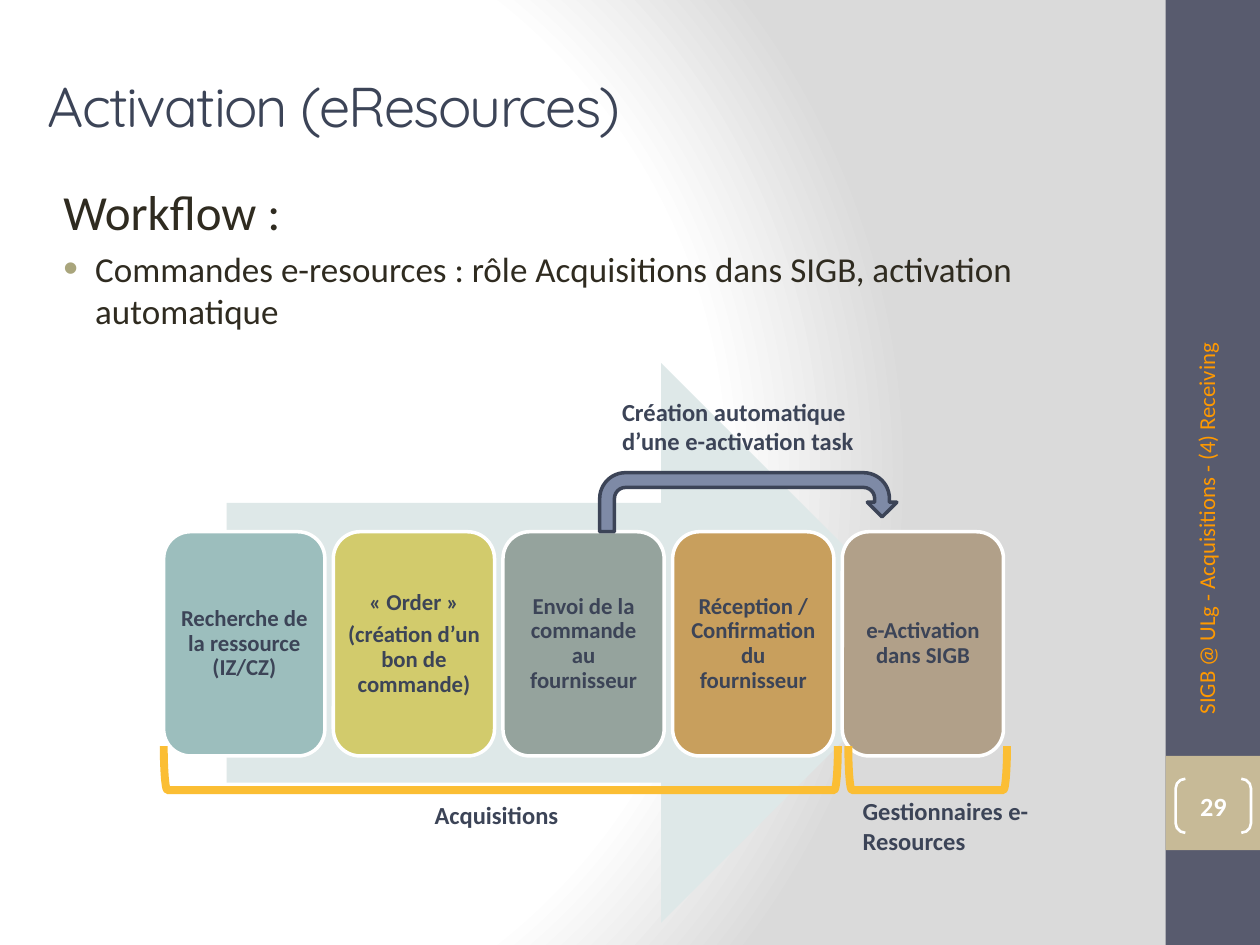
from collections import namedtuple
from dataclasses import dataclass

from lxml.etree import SubElement
from pptx import Presentation
from pptx.dml.color import RGBColor
from pptx.enum.shapes import MSO_SHAPE as Shape
from pptx.enum.text import MSO_ANCHOR as Anchor, MSO_AUTO_SIZE as AutoSize, PP_ALIGN as Align
from pptx.oxml.ns import qn
from pptx.util import Cm, Pt

Box = namedtuple("Box", "left top width height")  # centimetres


@dataclass(frozen=True)
class Theme:
    body_font: str = "Calibri"
    title_font: str = "Quicksand"
    ink: str = "3C4457"
    text: str = "2F2B20"
    bullet: str = "A9A57C"
    white: str = "FFFFFF"
    shade: str = "DADADA"
    strip: str = "585B6E"
    badge: str = "C7BA97"
    footer: str = "FF9900"
    big_arrow: str = "DEE8E8"
    turn_arrow: str = "7E8AA6"
    bracket: str = "FBBE34"
    title_size: int = 32
    heading_size: int = 28
    body_size: int = 20
    number_size: int = 15
    label_size: int = 14
    small_size: int = 13


THEME = Theme()
STEPS = [
    ("9CBEBD", ["Recherche de la ressource (IZ/CZ)"]),
    ("D2CB6C", ["« Order »", "(création d’un bon de commande)"]),
    ("95A39D", ["Envoi de la commande au fournisseur"]),
    ("C89F5D", ["Réception / Confirmation du fournisseur"]),
    ("B1A089", ["e-Activation dans SIGB"]),
]


def rgb(colour):
    return RGBColor.from_string(colour)


def within(area, left, top, width, height):
    """Box given relative to the corner of an area."""
    return Box(area.left + left, area.top + top, width, height)


def turned(box):
    """Unrotated frame of a shape that covers the box after a quarter turn."""
    shift = (box.width - box.height) / 2
    return Box(box.left + shift, box.top - shift, box.height, box.width)


def set_margins(frame, margin):
    frame.margin_left = frame.margin_right = Cm(margin)
    frame.margin_top = frame.margin_bottom = Cm(margin)


def style(para, size, colour, bold=False, font=THEME.body_font):
    para.font.name = font
    para.font.size = Pt(size)
    para.font.bold = bold
    para.font.color.rgb = rgb(colour)


def add_shape(page, kind, box, fill=None, line=None, weight=2):
    shape = page.shapes.add_shape(kind, *map(Cm, box))
    shape.shadow.inherit = False
    if fill:
        shape.fill.solid()
        shape.fill.fore_color.rgb = rgb(fill)
    else:
        shape.fill.background()
    if line:
        shape.line.color.rgb = rgb(line)
        shape.line.width = Pt(weight)
    else:
        shape.line.fill.background()
    return shape


def add_text(page, box, text, size, colour, bold=False):
    shape = page.shapes.add_textbox(*map(Cm, box))
    frame = shape.text_frame
    frame.word_wrap = True
    frame.text = text
    style(frame.paragraphs[0], size, colour, bold)
    return shape


def add_label(page, box, text):
    label = add_text(page, box, text, THEME.label_size, THEME.ink, True)
    label.text_frame.auto_size = AutoSize.SHAPE_TO_FIT_TEXT


def paint_background(page):
    fill = page.background.fill
    fill.gradient()
    gradient = page.background._cSld.find(".//" + qn("a:gradFill"))
    for child in list(gradient):
        gradient.remove(child)
    stops = SubElement(gradient, qn("a:gsLst"))
    for position, colour in [(0, THEME.white), (38, THEME.white),
                             (75, THEME.white), (100, THEME.shade)]:
        stop = SubElement(stops, qn("a:gs"), pos=str(position * 1000))
        SubElement(stop, qn("a:srgbClr"), val=colour)
    path = SubElement(gradient, qn("a:path"), path="circle")
    SubElement(path, qn("a:fillToRect"), l="20000", t="50000", r="100000", b="50000")


def build_side_strip(page, area):
    add_shape(page, Shape.RECTANGLE, area, THEME.strip)
    add_shape(page, Shape.RECTANGLE, within(area, 0, 15.24, area.width, area.width), THEME.badge)

    footer_box = turned(within(area, 0.41, 0.53, 1.02, 14.12))
    footer = add_text(page, footer_box, "SIGB @ ULg - Acquisitions - (4) Receiving",
                      THEME.small_size, THEME.footer)
    footer.rotation = 270

    number = add_shape(page, Shape.DOUBLE_BRACKET, within(area, 0.2, 15.7, 1.52, 1.09),
                       line=THEME.white, weight=1.5)
    number.adjustments[0] = 0.18
    frame = number.text_frame
    set_margins(frame, 0)
    frame.vertical_anchor = Anchor.MIDDLE
    frame.text = "29"
    para = frame.paragraphs[0]
    para.alignment = Align.CENTER
    style(para, THEME.number_size, THEME.white, True)


def build_title(page, box):
    title = page.shapes.title
    title.left, title.top, title.width, title.height = map(Cm, box)
    frame = title.text_frame
    frame.text = "Activation (eResources)"
    frame.auto_size = AutoSize.NONE
    frame.vertical_anchor = Anchor.MIDDLE
    para = frame.paragraphs[0]
    para.alignment = Align.LEFT
    style(para, THEME.title_size, THEME.ink, font=THEME.title_font)
    para.runs[0].font._element.set("spc", "-100")


def build_body(page, box):
    body = add_text(page, box, "Workflow :", THEME.heading_size, THEME.text)
    heading = body.text_frame.paragraphs[0]
    item = body.text_frame.add_paragraph()
    item.text = "Commandes e-resources : rôle Acquisitions dans SIGB, activation automatique"
    item.space_before = Pt(4)
    for para in (heading, item):
        props = para._p.get_or_add_pPr()
        props.set("marL", str(Cm(0.96)))
        props.set("indent", str(Cm(-0.64)))
    colour = SubElement(props, qn("a:buClr"))
    SubElement(colour, qn("a:srgbClr"), val=THEME.bullet)
    SubElement(props, qn("a:buSzPct"), val="120000")
    SubElement(props, qn("a:buFont"), typeface="Arial")
    SubElement(props, qn("a:buChar"), char="•")
    style(item, THEME.body_size, THEME.text)


def build_step(page, box, fill, lines):
    card = add_shape(page, Shape.ROUNDED_RECTANGLE, box, fill, THEME.white)
    frame = card.text_frame
    frame.word_wrap = True
    frame.vertical_anchor = Anchor.MIDDLE
    set_margins(frame, 0.13)
    frame.text = "\n".join(lines)
    for para in frame.paragraphs:
        para.alignment = Align.CENTER
        para.line_spacing = 0.9
        para.space_after = Pt(4.5)
        style(para, THEME.small_size, THEME.ink, True)


def build_workflow(page, area):
    add_shape(page, Shape.RIGHT_ARROW, within(area, 1.27, 0, 14.4, area.height), THEME.big_arrow)
    for index, (fill, lines) in enumerate(STEPS):
        build_step(page, within(area, index * 3.42, 3.4, 3.25, 4.52), fill, lines)

    for left, width in [(0, 13.59), (13.8, 3.2)]:
        bracket = add_shape(page, Shape.RIGHT_BRACKET, turned(within(area, left, 7.72, width, 0.89)),
                            line=THEME.bracket, weight=4.5)
        bracket.rotation = 90

    add_shape(page, Shape.U_TURN_ARROW, within(area, 8.79, 2.21, 5.99, 1.19),
              THEME.turn_arrow, THEME.ink)
    add_label(page, within(area, 5.21, 8.69, 3.99, 0.86), "Acquisitions")
    add_label(page, within(area, 13.84, 8.61, 4.37, 1.45), "Gestionnaires e-Resources")
    add_label(page, within(area, 8.99, 0.56, 5.79, 1.45),
              "Création automatique d’une e-activation task")


def main():
    deck = Presentation()
    deck.slide_width, deck.slide_height = Cm(25.4), Cm(19.05)
    page = deck.slides.add_slide(deck.slide_layouts[5])
    paint_background(page)
    build_side_strip(page, Box(23.5, 0, 1.9, 19.05))
    build_title(page, Box(0.71, 0.53, 22.2, 3.18))
    build_body(page, Box(0.71, 3.53, 22.2, 14.25))
    build_workflow(page, Box(3.3, 7.32, 16.93, 11.28))
    deck.save("out.pptx")


if __name__ == "__main__":
    main()
